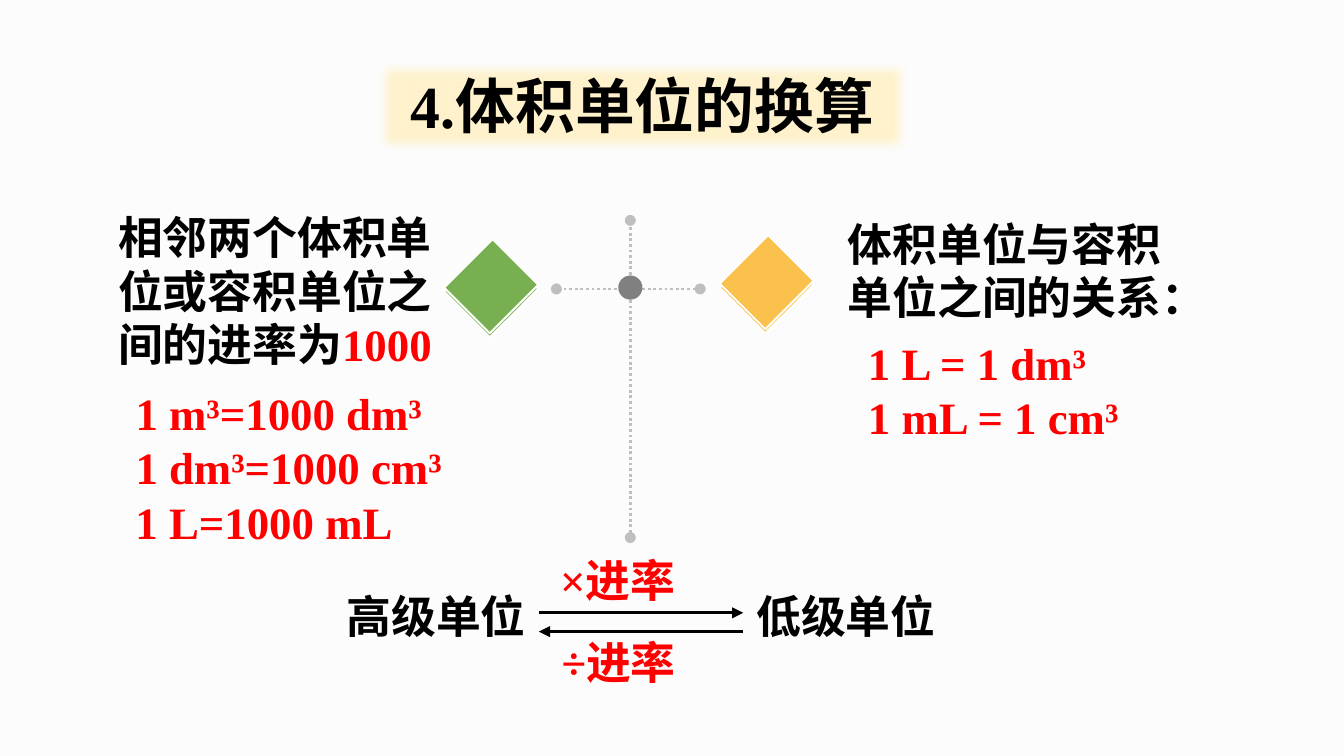
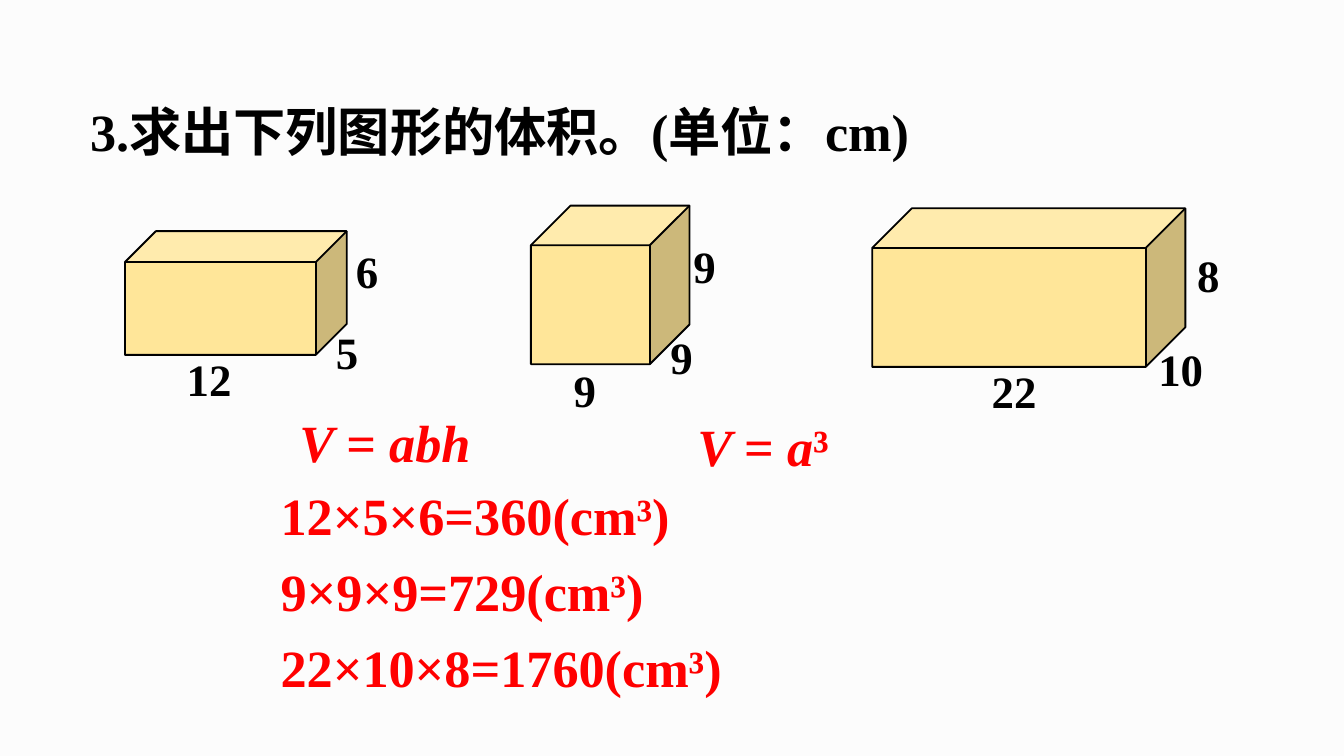
from lxml.etree import SubElement
from pptx import Presentation
from pptx.dml.color import RGBColor
from pptx.enum.dml import MSO_LINE
from pptx.enum.lang import MSO_LANGUAGE_ID
from pptx.enum.shapes import MSO_CONNECTOR, MSO_SHAPE
from pptx.enum.text import MSO_ANCHOR, MSO_AUTO_SIZE, PP_ALIGN
from pptx.oxml.ns import qn
from pptx.util import Inches, Pt

FONT = "Times New Roman"
BLACK, RED, GREY, WHITE = "000000", "FF0000", "BFBFBF", "FFFFFF"

prs = Presentation()
prs.slide_width, prs.slide_height = Inches(10), Inches(5.625)
U = prs.slide_width // 100  # one cell of a square grid, 100 columns wide


def hue(code):
    return RGBColor.from_string(code)


def write(shape, text, size, code=BLACK, anchor=MSO_ANCHOR.TOP):
    """Fill a shape with text: a new line starts a paragraph, a bar a run."""
    frame = shape.text_frame
    frame.word_wrap = True
    frame.auto_size = MSO_AUTO_SIZE.NONE
    frame.vertical_anchor = anchor
    frame.text = text.replace("|", "")
    runs = []
    for para, line in zip(frame.paragraphs, text.split("\n")):
        first, *rest = line.split("|")
        para.runs[0].text = first
        for part in rest:
            para.add_run().text = part
        runs += para.runs
    for run in runs:
        font = run.font
        font.name, font.size, font.bold = FONT, Pt(size), True
        font.color.rgb = hue(code)
        font.language_id = MSO_LANGUAGE_ID.SIMPLIFIED_CHINESE
    return runs


# Shared background and titles
back = prs.slide_master.background.fill
back.solid()
back.fore_color.rgb = hue("FCFCFC")
slides, heads = [], []
for text, size, box in [
    ("4.体积单位的换算", 32, (28.1, 4.6, 39.4, 6.7)),
    ("3.求出下列图形的体积。(单位：cm)", 28, (5.7, 5.7, 89.1, 6.3)),
]:
    slide = prs.slides.add_slide(prs.slide_layouts[5])
    head = slide.shapes.title
    head.left, head.top, head.width, head.height = [int(v * U) for v in box]
    write(head, text, size)
    slides.append(slide)
    heads.append(head)

# Slide 1: title with a soft yellow band
units = slides[0].shapes
heads[0].text_frame.word_wrap = False
heads[0].text_frame.paragraphs[0].alignment = PP_ALIGN.CENTER
heads[0].fill.solid()
heads[0].fill.fore_color.rgb = hue("FFF2CC")
glow = SubElement(heads[0].element.spPr, qn("a:effectLst"))
SubElement(glow, qn("a:softEdge"), rad=str(Pt(5)))

# Statements and conversions
for text, code, box in [
    ("相邻两个体积单位或容积单位之间的进率为|1000", BLACK, (7.8, 15.1, 26.1, 13.1)),
    ("1 m³=1000 dm³\n1 dm³=1000 cm³", RED, (9.1, 28.2, 27.1, 9.1)),
    ("1 L=1000 mL", RED, (9.1, 36.3, 23.7, 5)),
    ("体积单位与容积单位之间的关系：", BLACK, (62.1, 15.6, 26.7, 9.1)),
    ("1 L = 1 dm³\n1 mL = 1 cm³", RED, (63.6, 24.5, 21.1, 9.1)),
    ("高级单位", BLACK, (24.8, 43.3, 16.6, 5)),
    ("低级单位", BLACK, (55.3, 43.3, 16.6, 5)),
    ("×进率", RED, (40.7, 40.6, 12.2, 5)),
    ("÷进率", RED, (40.8, 46.7, 12.2, 5)),
]:
    runs = write(units.add_textbox(*[int(v * U) for v in box]), text, 24, code)
    if "|" in text:
        runs[1].font.color.rgb = hue(RED)

# Dotted cross and the two arrows
for ends, code, tips in [
    ((52.1, 21.5, 41.4, 21.5), GREY, {"headEnd": "oval", "tailEnd": "oval"}),
    ((46.9, 40, 46.9, 16.4), GREY, {"headEnd": "oval", "tailEnd": "oval"}),
    ((40.1, 45.6, 55.3, 45.6), BLACK, {"tailEnd": "triangle"}),
    ((55.3, 47, 40.1, 47), BLACK, {"tailEnd": "triangle"}),
]:
    link = units.add_connector(MSO_CONNECTOR.STRAIGHT, *[int(v * U) for v in ends])
    link.line.width = Pt(1.5)
    link.line.color.rgb = hue(code)
    if code == GREY:
        link.line.dash_style = MSO_LINE.ROUND_DOT
    for tag, tip in tips.items():
        SubElement(link.line._get_or_add_ln(), qn("a:" + tag), type=tip)
    SubElement(link.element.spPr, qn("a:effectLst"))

# Stacked diamonds beside the cross
for left, top, code in [(34, 19.2, "78AF51"), (54.5, 18.9, "FAC14D")]:
    for lift in (0, 0.3):
        tile = units.add_shape(MSO_SHAPE.RECTANGLE, int(left * U),
                               int((top - lift) * U), int(5.1 * U), int(4.8 * U))
        tile.rotation = 315
        tile.shadow.inherit = False
        tile.fill.solid()
        tile.fill.fore_color.rgb = hue(code)
        tile.line.color.rgb = hue(WHITE)
        tile.line.width = Pt(1)

# Hub of the cross
hub = units.add_shape(MSO_SHAPE.OVAL, 46 * U, int(20.5 * U), int(1.8 * U), int(1.8 * U))
hub.shadow.inherit = False
hub.fill.solid()
hub.fill.fore_color.rgb = hue("808080")
hub.line.fill.background()

# Slide 2: question
solids = slides[1].shapes
line = heads[1].text_frame.paragraphs[0]
line.alignment, line.line_spacing = PP_ALIGN.LEFT, 1.25

# Solids, each with its length, width and height
for box, marks in [
    ((9.3, 17.2, 16.5, 9.2),
     [("12", 12.9, 25.6, 7.1), ("5", 24, 23.6, 3.9), ("6", 25.5, 17.6, 4.3)]),
    ((39.5, 15.3, 11.8, 11.8),
     [("9", 41.7, 26.4, 5.1), ("9", 48.9, 24, 5.1), ("9", 50.6, 17.2, 5.1)]),
    ((64.9, 15.5, 23.3, 11.8),
     [("22", 72.8, 26.5, 7.1), ("10", 85.2, 24.9, 6.7), ("8", 88.1, 17.9, 5.4)]),
]:
    cube = solids.add_shape(MSO_SHAPE.CUBE, *[int(v * U) for v in box])
    cube.adjustments[0] = 0.25
    cube.shadow.inherit = False
    cube.fill.solid()
    cube.fill.fore_color.rgb = hue("FFE699")
    cube.line.color.rgb = hue(BLACK)
    cube.line.width = Pt(1)
    for text, left, top, wide in marks:
        mark = solids.add_textbox(*[int(v * U) for v in (left, top, wide, 5.1)])
        write(mark, text, 24, anchor=MSO_ANCHOR.MIDDLE)

# Formulas, with the letters in italics, and workings
for text, left, top, wide in [
    ("V |= |abh", 21.3, 30, 27.6),
    ("V |= |a|³", 50.9, 30.3, 14),
    ("12×5×6=360(cm³)", 19.9, 35.5, 36.6),
    ("9×9×9=729(cm³)", 19.9, 41.1, 36.6),
    ("22×10×8=1760(cm³)", 19.9, 46.8, 39.4),
]:
    box = solids.add_textbox(*[int(v * U) for v in (left, top, wide, 5.7)])
    for run in write(box, text, 28, RED):
        run.font.italic = run.text.strip().isalpha()

prs.save("out.pptx")
